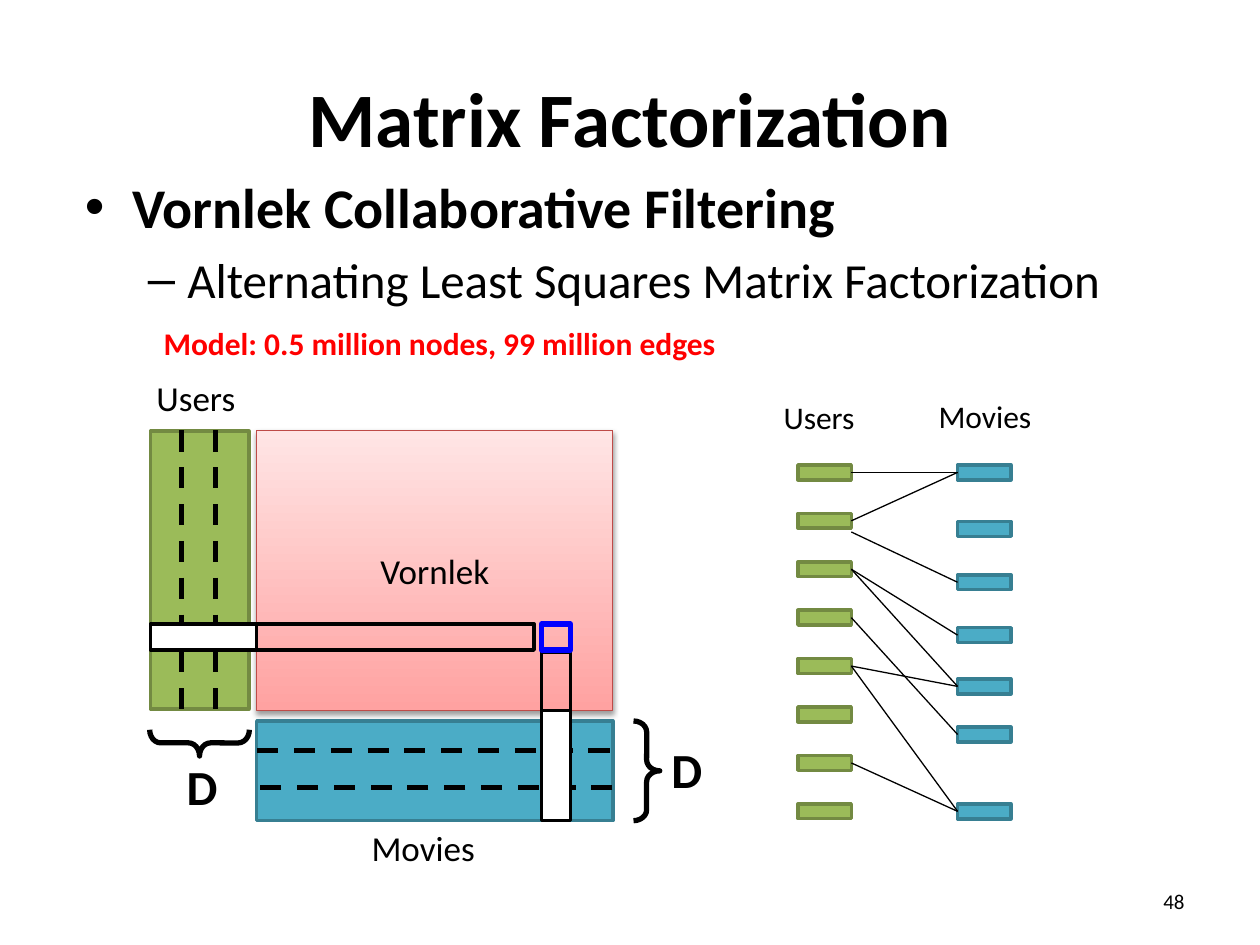
"""Build the matrix factorization slide with its block diagram and bipartite graph."""
from lxml.etree import SubElement
from pptx import Presentation
from pptx.dml.color import RGBColor
from pptx.enum.dml import MSO_LINE
from pptx.enum.shapes import MSO_CONNECTOR, MSO_SHAPE
from pptx.enum.text import MSO_ANCHOR, MSO_AUTO_SIZE, PP_ALIGN
from pptx.oxml.ns import qn
from pptx.util import Pt

COLORS = {
    "black": "000000", "white": "FFFFFF", "red": "FF0000", "blue": "0000FF",
    "green": "9BBB59", "green edge": "738A42", "teal": "4BACC6", "teal edge": "377F92",
    "pink": "FFE5E5", "rose": "FFA2A1", "rose edge": "BE4B48",
}
RGB = {name: RGBColor.from_string(value) for name, value in COLORS.items()}
SERVICE = "Vornlek"


def write_text(frame, text, size, color="black", bold=False, align=PP_ALIGN.LEFT,
               anchor=MSO_ANCHOR.TOP, wrap=True, level=0, new=False):
    frame.word_wrap = wrap
    frame.vertical_anchor = anchor
    paragraph = frame.add_paragraph() if new else frame.paragraphs[0]
    paragraph.alignment = align
    paragraph.level = level
    run = paragraph.add_run()
    run.text = text
    run.font.name = "Calibri"
    run.font.size = Pt(size)
    run.font.bold = bold
    run.font.color.rgb = RGB[color]


def add_block(left, top, width, height, fill=None, line="black", weight=2,
              kind=MSO_SHAPE.RECTANGLE):
    shape = slide.shapes.add_shape(kind, Pt(left), Pt(top), Pt(width), Pt(height))
    shape.shadow.inherit = False
    if fill:
        shape.fill.solid()
        shape.fill.fore_color.rgb = RGB[fill]
    else:
        shape.fill.background()
    shape.line.color.rgb = RGB[line]
    shape.line.width = Pt(weight)
    return shape


presentation = Presentation()
presentation.slide_width, presentation.slide_height = Pt(720), Pt(540)
slide = presentation.slides.add_slide(presentation.slide_layouts[1])

title, body = slide.placeholders
title.left, title.top, title.width, title.height = Pt(36), Pt(21.6), Pt(648), Pt(90)
write_text(title.text_frame, "Matrix Factorization", 44, bold=True,
           align=PP_ALIGN.CENTER, anchor=MSO_ANCHOR.MIDDLE)
body.left, body.top, body.width, body.height = Pt(41.3), Pt(95), Pt(654), Pt(391)
write_text(body.text_frame, f"{SERVICE} Collaborative Filtering", 32, bold=True)
write_text(body.text_frame, "Alternating Least Squares Matrix Factorization", 28,
           level=1, new=True)

ratings = add_block(146.7, 246, 203.5, 160, "pink", "rose edge", 0.75, MSO_SHAPE.CUBE)
ratings.adjustments[0] = 0
ratings.fill.gradient()
ratings.fill.gradient_angle = 270
for stop, color in zip(ratings.fill.gradient_stops, ("pink", "rose")):
    stop.color.rgb = RGB[color]
effects = ratings._element.spPr.find(qn("a:effectLst"))
shadow = SubElement(effects, qn("a:outerShdw"), blurRad=str(Pt(3.1)), dist=str(Pt(1.6)),
                    dir="5400000", rotWithShape="0")
shadow_color = SubElement(shadow, qn("a:srgbClr"), val=COLORS["black"])
SubElement(shadow_color, qn("a:alpha"), val="38000")
write_text(ratings.text_frame, SERVICE, 20, align=PP_ALIGN.CENTER,
           anchor=MSO_ANCHOR.MIDDLE, wrap=False)

add_block(146.7, 412, 203.5, 57, "teal", "teal edge")
add_block(86, 246.3, 56.2, 159, "green", "green edge")

users = [add_block(456, 265.7 + 27.67 * row, 30.5, 8.5, "green", "green edge")
         for row in range(8)]
movies = [add_block(547.2, top, 30.5, 8.5, "teal", "teal edge")
          for top in (265.7, 298, 328.5, 358.7, 388, 415.5, 459.4)]

lines = []
for x1, y1, x2, y2 in [(103.7, 246, 103.7, 405.5), (123, 246, 123, 405.5),
                       (147, 429, 350, 429), (350, 450, 147, 450)]:
    factor = slide.shapes.add_connector(MSO_CONNECTOR.STRAIGHT, Pt(x1), Pt(y1), Pt(x2), Pt(y2))
    lines.append((factor, 3, MSO_LINE.DASH))

for user, movie in [(0, 0), (1, 0), (1, 2), (2, 3), (2, 4), (3, 5), (4, 4), (4, 6), (6, 6)]:
    edge = slide.shapes.add_connector(MSO_CONNECTOR.STRAIGHT, Pt(486.5), Pt(304), Pt(547), Pt(333))
    if (user, movie) != (1, 2):
        edge.begin_connect(users[user], 3)
    edge.end_connect(movies[movie], 1)
    lines.append((edge, 0.75, MSO_LINE.SOLID))

for connector, weight, dash in lines:
    connector.line.color.rgb = RGB["black"]
    connector.line.width = Pt(weight)
    connector.line.dash_style = dash
    SubElement(connector._element.spPr, qn("a:effectLst"))

add_block(146.7, 356.5, 158.5, 15)
add_block(309.5, 373, 16.5, 33)
add_block(309.5, 406, 16.5, 63, "white")
add_block(86, 356.5, 60.7, 15, "white")
add_block(309.5, 356.5, 16.5, 15, line="blue", weight=3)

for left, top, rotation in [(362, 412, 0), (106.5, 396, 90)]:
    brace = add_block(left, top, 15, 57, weight=3, kind=MSO_SHAPE.RIGHT_BRACE)
    brace.adjustments[0] = 0.42
    brace.rotation = rotation

for text, left, top, width, height, size, color, bold in [
    ("Model: 0.5 million nodes, 99 million edges", 86.4, 181.5, 554, 29, 18, "red", True),
    ("Users", 82.3, 211.5, 78.5, 37.5, 20, "black", False),
    ("Movies", 205.2, 468.5, 93, 37.5, 20, "black", False),
    ("D", 376.5, 419, 32.5, 41, 28, "black", True),
    ("D", 99.5, 429, 32.5, 41, 28, "black", True),
    ("Users", 440.7, 224, 56, 29, 18, "black", False),
    ("Movies", 529.2, 223.3, 68.5, 29, 18, "black", False),
]:
    label = slide.shapes.add_textbox(Pt(left), Pt(top), Pt(width), Pt(height))
    write_text(label.text_frame, text, size, color, bold, wrap=color == "red")
    label.text_frame.auto_size = MSO_AUTO_SIZE.SHAPE_TO_FIT_TEXT

number = slide.shapes.add_textbox(Pt(516), Pt(500.5), Pt(168), Pt(29))
write_text(number.text_frame, "48", 12, align=PP_ALIGN.RIGHT, anchor=MSO_ANCHOR.MIDDLE)

presentation.save("out.pptx")
